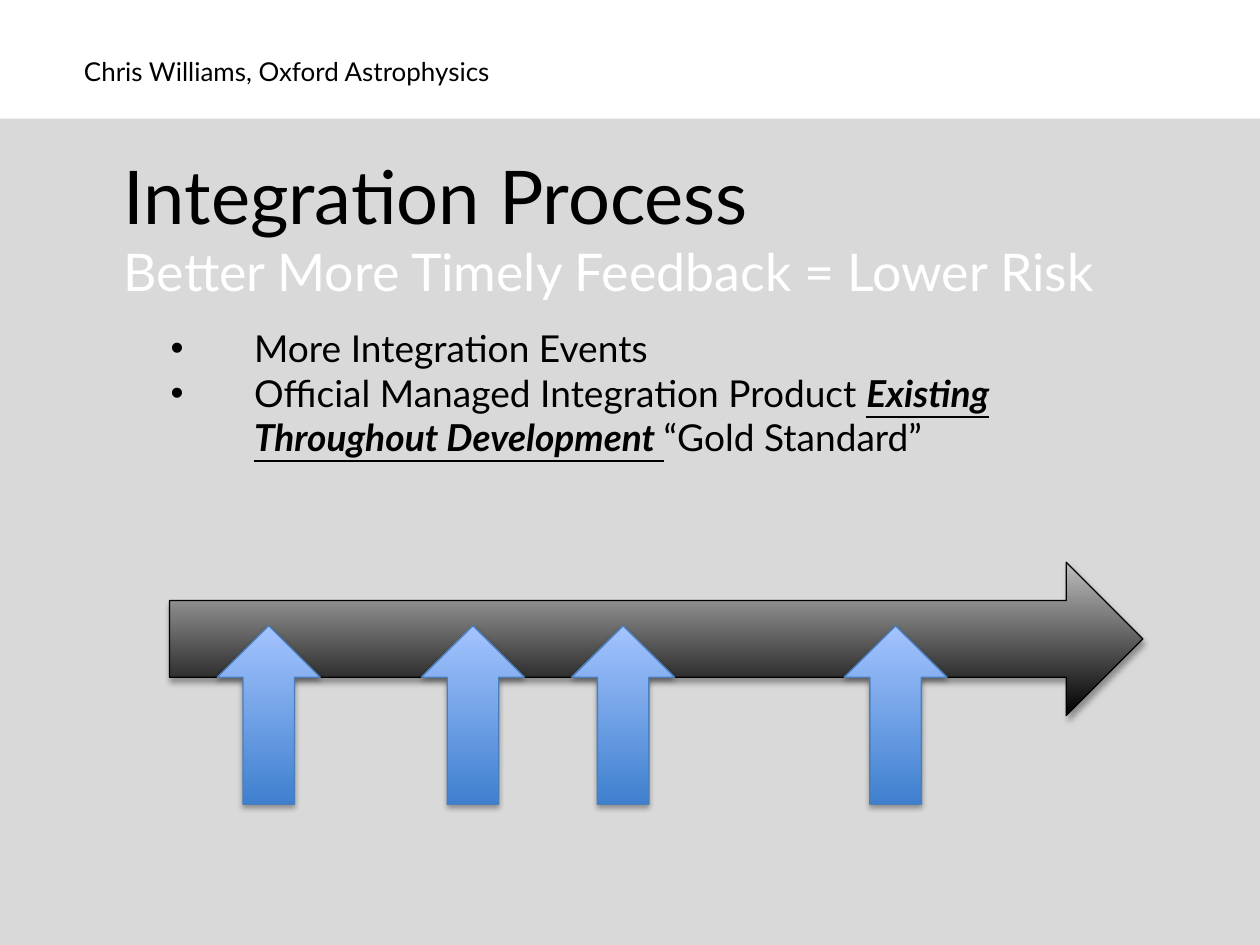
from lxml.etree import SubElement
from pptx import Presentation
from pptx.dml.color import RGBColor
from pptx.enum.shapes import MSO_SHAPE as Kind
from pptx.oxml.ns import qn
from pptx.util import Cm, Pt


def tint(code):
    return RGBColor.from_string(code)


class Deck:
    font = "Lato"
    ink = "000000"

    def __init__(self, wide, high):
        self.prs = Presentation()
        self.prs.slide_width, self.prs.slide_height = Cm(wide), Cm(high)
        self.slide = self.prs.slides.add_slide(self.prs.slide_layouts[6])

    def box(self, left, top, wide, high):
        frame = self.slide.shapes.add_textbox(
            Cm(left), Cm(top), Cm(wide), Cm(high)).text_frame
        frame.word_wrap = True
        return frame

    def line(self, frame, runs, size, color=ink, bullet=False):
        """Add a paragraph of (text, stressed) runs."""
        par = frame.paragraphs[0]
        if par.runs:
            par = frame.add_paragraph()
        if bullet:
            par.level = 1
            props = par._p.get_or_add_pPr()
            props.set("marL", str(Cm(2.79)))
            props.set("indent", str(Cm(-1.59)))
            SubElement(props, qn("a:buFont"), typeface="Arial")
            SubElement(props, qn("a:buChar"), char="•")
        for text, stress in runs:
            run = par.add_run()
            run.text = text
            font = run.font
            font.name, font.size = self.font, Pt(size)
            font.color.rgb = tint(color)
            font.bold = font.italic = font.underline = stress

    def shape(self, kind, left, top, wide, high):
        item = self.slide.shapes.add_shape(
            kind, Cm(left), Cm(top), Cm(wide), Cm(high))
        item.shadow.inherit = False
        return item

    def band(self, left, top, wide, high, color):
        item = self.shape(Kind.RECTANGLE, left, top, wide, high)
        item.fill.solid()
        item.fill.fore_color.rgb = tint(color)
        item.line.fill.background()

    def arrow(self, kind, left, top, wide, high, colors, edge):
        """Draw a block arrow shaded from bottom to top."""
        item = self.shape(kind, left, top, wide, high)
        item.fill.gradient()
        item.fill.gradient_angle = 90
        for stop, color in zip(item.fill.gradient_stops, colors):
            stop.color.rgb = tint(color)
        item.line.color.rgb = tint(edge)
        item.line.width = Pt(0.75)
        self.shade(item)

    def shade(self, item):
        effects = item.element.spPr.find(qn("a:effectLst"))
        shadow = SubElement(
            effects, qn("a:outerShdw"), blurRad=str(Pt(3.1)),
            dist=str(Pt(1.8)), dir="5400000", rotWithShape="0")
        color = SubElement(shadow, qn("a:srgbClr"), val=self.ink)
        SubElement(color, qn("a:alpha"), val="35000")


def main():
    deck = Deck(24, 18)
    header = deck.box(1.35, 0.94, 14, 0.86)
    deck.line(header, [("Chris Williams, Oxford Astrophysics", False)], 14)
    deck.band(0, 2.26, 24, 15.74, "D9D9D9")

    title = deck.box(2.11, 2.74, 19.96, 3.18)
    deck.line(title, [("Integration Process", False)], 40)
    deck.line(title, [("Better More Timely Feedback = Lower Risk", False)],
              28, "FFFFFF")

    deck.arrow(Kind.RIGHT_ARROW, 3.23, 10.71, 18.54, 2.92,
               ("000000", "BDBDBD"), "000000")

    points = deck.box(1.8, 6.08, 19.96, 4.54)
    deck.line(points, [("More Integration Events", False)], 20, bullet=True)
    deck.line(points, [("Official Managed Integration Product ", False),
                       ("Existing Throughout Development ", True),
                       ("“Gold Standard”", False)], 20, bullet=True)

    for left in (4.14, 8.03, 10.89, 16.08):
        deck.arrow(Kind.UP_ARROW, left, 11.92, 1.96, 3.4,
                   ("3F80CE", "A4C4FF"), "4B7EBC")
    deck.prs.save("out.pptx")


if __name__ == "__main__":
    main()
